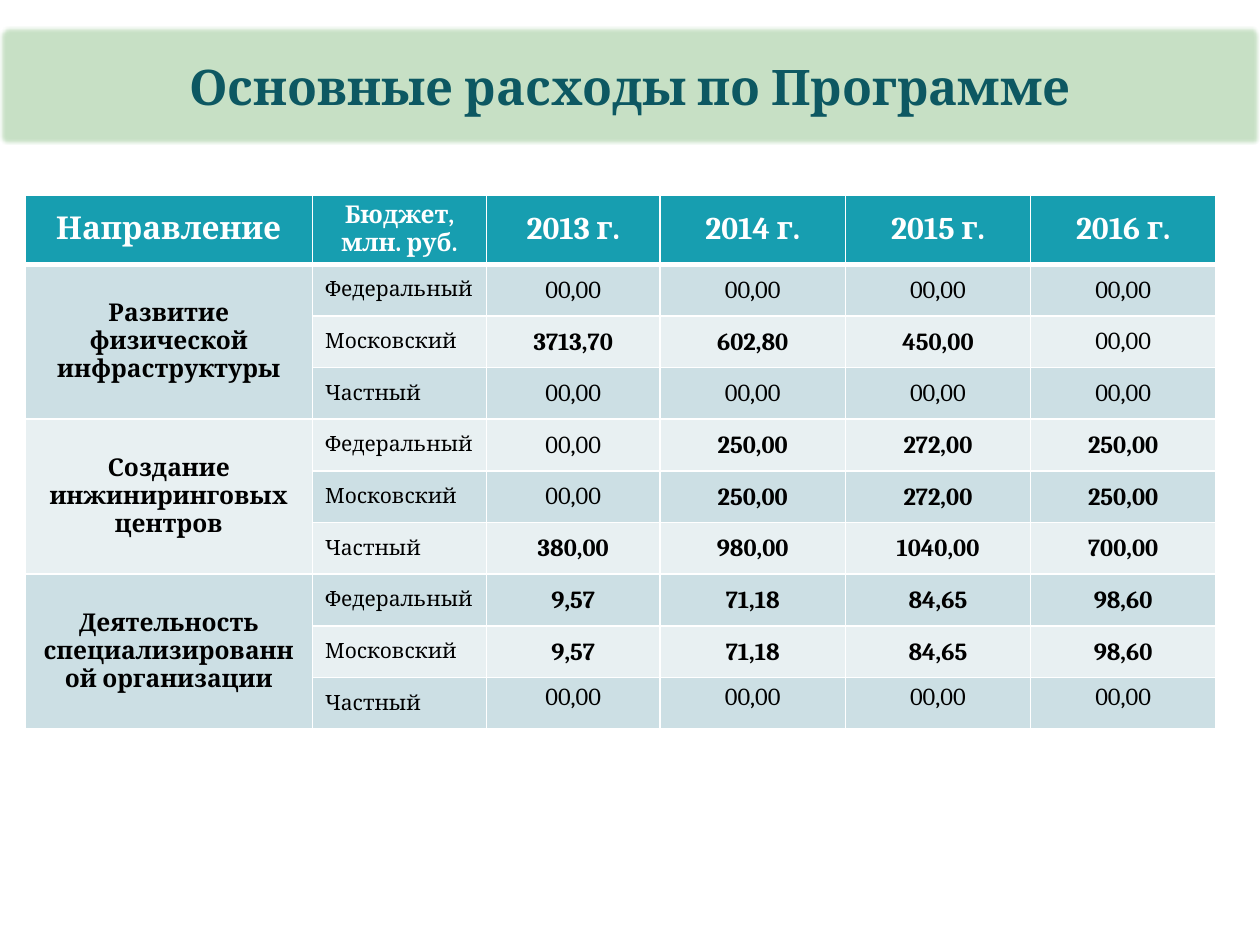
from dataclasses import dataclass

from lxml.etree import SubElement as Sub
from pptx import Presentation
from pptx.dml.color import RGBColor as RGB
from pptx.enum.shapes import MSO_SHAPE as Shape
from pptx.enum.text import MSO_ANCHOR as Anchor, PP_ALIGN as Align
from pptx.oxml.ns import qn
from pptx.util import Inches, Pt


@dataclass(frozen=True)
class Theme:
    font: str = "Cambria"
    white: str = "FFFFFF"
    black: str = "000000"
    title: str = "0D5862"
    banner: str = "92C48F"
    head: str = "179EB0"
    bands: tuple = ("CCDFE4", "E8F0F2")
    big: int = 28
    year: int = 18
    body: int = 14
    small: int = 12
    line: int = 1
    rule: int = 3


THEME = Theme()
ZERO = "00,00"
HEADS = ["Направление", "Бюджет, млн. руб.",
         "2013 г.", "2014 г.", "2015 г.", "2016 г."]
FUNDS = ["Федеральный", "Московский", "Частный"]
AREAS = {
    "Развитие физической инфраструктуры": [
        [ZERO] * 4,
        ["3713,70", "602,80", "450,00", ZERO],
        [ZERO] * 4],
    "Создание инжиниринговых центров": [
        [ZERO, "250,00", "272,00", "250,00"],
        [ZERO, "250,00", "272,00", "250,00"],
        ["380,00", "980,00", "1040,00", "700,00"]],
    "Деятельность специализированной организации": [
        ["9,57", "71,18", "84,65", "98,60"],
        ["9,57", "71,18", "84,65", "98,60"],
        [ZERO] * 4],
}
COLS = [2.28, 1.38, 1.38, 1.47, 1.47, 1.47]


def write(frame, text, size, color, bold=False, align=Align.CENTER):
    frame.text = text
    para = frame.paragraphs[0]
    para.alignment = align
    font = para.runs[0].font
    font.name, font.size, font.bold = THEME.font, Pt(size), bold
    font.color.rgb = RGB.from_string(color)


def edge(cell, top, bottom):
    """Draw the four white borders of a cell."""
    props = cell._tc.get_or_add_tcPr()
    sides = {"L": THEME.line, "R": THEME.line, "T": top, "B": bottom}
    for side, width in sides.items():
        line = Sub(props, qn(f"a:ln{side}"), w=str(Pt(width)))
        fill = Sub(line, qn("a:solidFill"))
        Sub(fill, qn("a:srgbClr"), val=THEME.white)


def paint(cell, color):
    cell.fill.solid()
    cell.fill.fore_color.rgb = RGB.from_string(color)
    cell.vertical_anchor = Anchor.MIDDLE


def fill_value(cell, text):
    bold = text != ZERO
    write(cell.text_frame, text, THEME.body, THEME.black, bold)
    if bold:
        cell.margin_left = cell.margin_right = cell.margin_top = Inches(0.01)
        cell.margin_bottom = 0


def add_costs(slide, left, top, width, height):
    count = 1 + len(AREAS) * len(FUNDS)
    table = slide.shapes.add_table(
        count, len(COLS), Inches(left), Inches(top),
        Inches(width), Inches(height)).table
    for col, size in zip(table.columns, COLS):
        col.width = Inches(size)
    for row in table.rows:
        row.height = Inches(0.41)

    # Borders and banded fills
    for r in range(count):
        color = THEME.bands[(r - 1) % 2] if r else THEME.head
        for c in range(len(COLS)):
            cell = table.cell(r, c)
            edge(cell, THEME.rule if r == 1 else THEME.line,
                 THEME.line if r else THEME.rule)
            paint(cell, color)

    # Header row
    for c, text in enumerate(HEADS):
        size = THEME.body if c == 1 else THEME.year
        write(table.cell(0, c).text_frame, text, size, THEME.white, True)

    # One merged block for each area
    for n, (area, rows) in enumerate(AREAS.items()):
        first = 1 + n * len(FUNDS)
        name = table.cell(first, 0)
        name.merge(table.cell(first + len(FUNDS) - 1, 0))
        write(name.text_frame, area, THEME.body, THEME.black, True)
        for r, (fund, values) in enumerate(zip(FUNDS, rows), first):
            write(table.cell(r, 1).text_frame, fund, THEME.small,
                  THEME.black, align=Align.LEFT)
            for c, value in enumerate(values, 2):
                fill_value(table.cell(r, c), value)

    # Values of the last row sit at the top
    for c in range(2, len(COLS)):
        table.cell(count - 1, c).vertical_anchor = Anchor.TOP


def add_banner(slide, left, top, width, height):
    box = slide.shapes.add_shape(
        Shape.ROUNDED_RECTANGLE, Inches(left), Inches(top),
        Inches(width), Inches(height))
    box.adjustments[0] = 0.06
    box.shadow.inherit = False
    box.line.fill.background()
    box.fill.solid()
    box.fill.fore_color.rgb = RGB.from_string(THEME.banner)

    # Half transparent fill with soft edges
    props = box._element.spPr
    Sub(props.find(".//" + qn("a:srgbClr")), qn("a:alpha"), val="50000")
    Sub(props.find(qn("a:effectLst")), qn("a:softEdge"), rad=str(Pt(2.5)))

    box.text_frame.word_wrap = True
    box.text_frame.vertical_anchor = Anchor.MIDDLE
    write(box.text_frame, "Основные расходы по Программе",
          THEME.big, THEME.title, True)


def main():
    deck = Presentation()
    deck.slide_width, deck.slide_height = Inches(10), Inches(7.5)
    slide = deck.slides.add_slide(deck.slide_layouts[6])
    add_costs(slide, 0.2, 1.55, sum(COLS), 4.22)
    add_banner(slide, 0, 0.21, 10, 0.94)
    deck.save("out.pptx")


if __name__ == "__main__":
    main()
